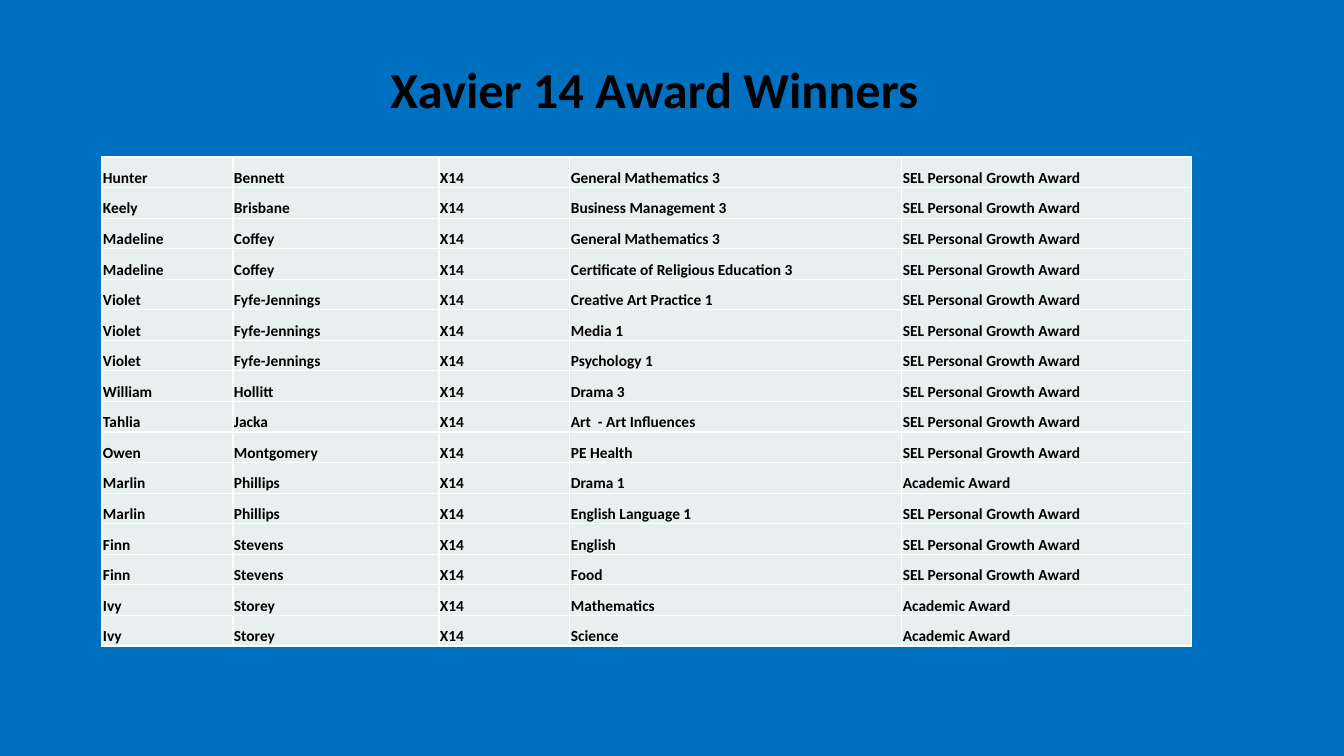
from lxml import etree
from pptx import Presentation
from pptx.dml.color import RGBColor
from pptx.enum import text
from pptx.oxml import ns
from pptx.util import Pt

SCALE = 12192000 / 1344  # EMU per px
SEL, ACADEMIC = "SEL Personal Growth Award", "Academic Award"
WINNERS = [
    ("Hunter", "Bennett", "General Mathematics 3", SEL),
    ("Keely", "Brisbane", "Business Management 3", SEL),
    ("Madeline", "Coffey", "General Mathematics 3", SEL),
    ("Madeline", "Coffey", "Certificate of Religious Education 3", SEL),
    ("Violet", "Fyfe-Jennings", "Creative Art Practice 1", SEL),
    ("Violet", "Fyfe-Jennings", "Media 1", SEL),
    ("Violet", "Fyfe-Jennings", "Psychology 1", SEL),
    ("William", "Hollitt", "Drama 3", SEL),
    ("Tahlia", "Jacka", "Art  - Art Influences", SEL),
    ("Owen", "Montgomery", "PE Health", SEL),
    ("Marlin", "Phillips", "Drama 1", ACADEMIC),
    ("Marlin", "Phillips", "English Language 1", SEL),
    ("Finn", "Stevens", "English", SEL),
    ("Finn", "Stevens", "Food", SEL),
    ("Ivy", "Storey", "Mathematics", ACADEMIC),
    ("Ivy", "Storey", "Science", ACADEMIC),
]
COLUMN_WIDTHS = [131, 206, 131, 332, 290]
TABLE_HEIGHT = 489


def px(length):
    return round(length * SCALE)


def paint(target, colour):
    """Fill a background, cell or font with one solid colour."""
    target.fill.solid()
    target.fill.fore_color.rgb = RGBColor.from_string(colour)


# Slide and background
deck = Presentation()
deck.slide_width, deck.slide_height = px(1344), px(756)
page = deck.slides.add_slide(deck.slide_layouts[5])
paint(page.background, "0070C0")

# Title
title = page.shapes.title
title.left, title.top, title.width, title.height = px(67), px(60), px(1175), px(125)
title.text_frame.text = "Xavier 14 Award Winners"
title.text_frame.vertical_anchor = text.MSO_ANCHOR.TOP
para = title.text_frame.paragraphs[0]
para.alignment = text.PP_ALIGN.CENTER
para.line_spacing = 0.9
para.font.name, para.font.size, para.font.bold = "Calibri", Pt(36), True
paint(para.font, "000000")

# Table grid
table = page.shapes.add_table(
    len(WINNERS), len(COLUMN_WIDTHS),
    px(102), px(157), px(sum(COLUMN_WIDTHS)), px(TABLE_HEIGHT),
).table
table.first_row = table.horz_banding = False
for column, width in zip(table.columns, COLUMN_WIDTHS):
    column.width = px(width)
for row in table.rows:
    row.height = px(TABLE_HEIGHT / len(WINNERS))

# Cells
for row, (first, last, subject, award) in zip(table.rows, WINNERS):
    for cell, words in zip(row.cells, (first, last, "X14", subject, award)):
        cell.text = words
        cell.vertical_anchor = text.MSO_ANCHOR.BOTTOM
        cell.margin_left = cell.margin_right = cell.margin_top = px(1)
        cell.margin_bottom = 0
        para = cell.text_frame.paragraphs[0]
        para.font.name, para.font.size, para.font.bold = "Calibri", Pt(11), True
        paint(para.font, "000000")

        # White borders go before the fill
        properties = cell._tc.get_or_add_tcPr()
        for side in ("a:lnL", "a:lnR", "a:lnT", "a:lnB"):
            line = etree.SubElement(properties, ns.qn(side), w=str(Pt(1)))
            solid = etree.SubElement(line, ns.qn("a:solidFill"))
            etree.SubElement(solid, ns.qn("a:srgbClr"), val="FFFFFF")
        paint(cell, "E8EFEF")

deck.save("out.pptx")
